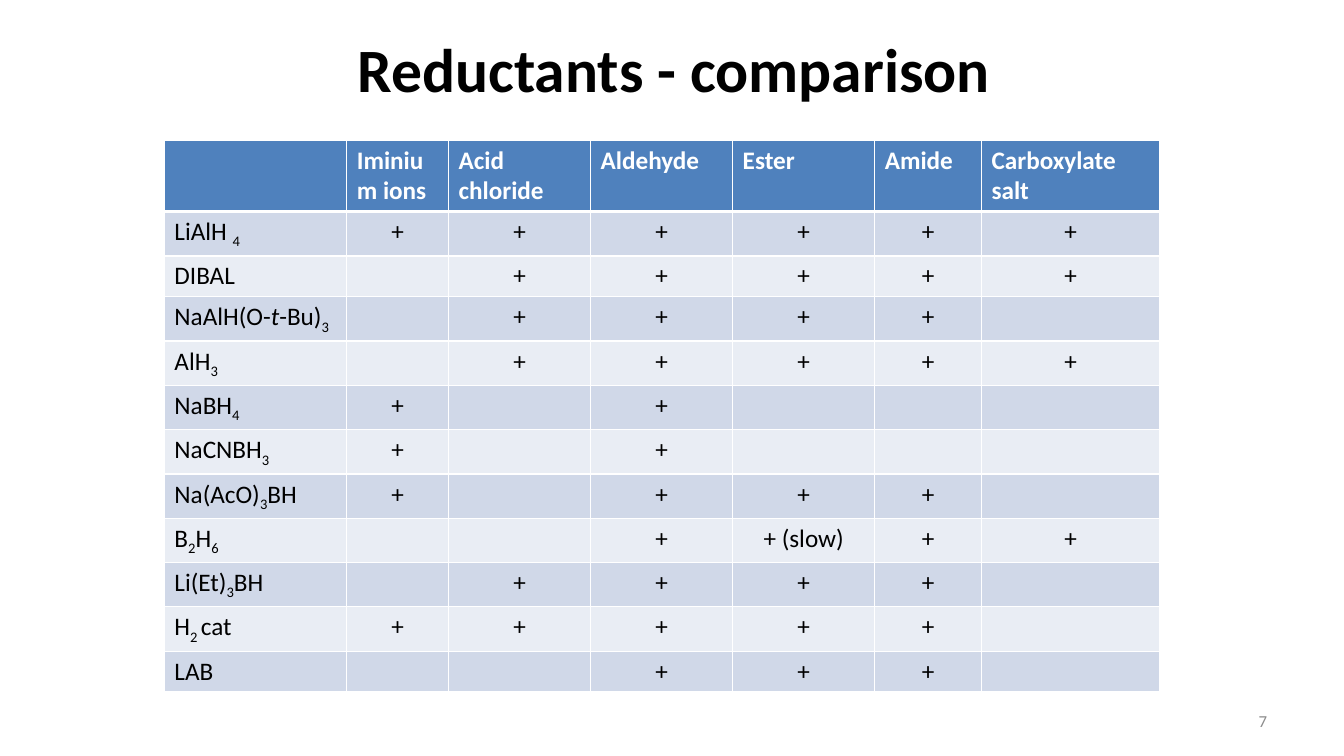
from dataclasses import dataclass

from lxml import etree
from pptx import Presentation
from pptx import util as u
from pptx.dml.color import RGBColor
from pptx.enum import text
from pptx.oxml import ns


@dataclass(frozen=True)
class Theme:
    font: str = "Calibri"
    title_size: int = 44
    body_size: int = 18
    number_size: int = 12
    ink: str = "000000"
    white: str = "FFFFFF"
    grey: str = "8C8C8C"
    header: str = "4F81BD"
    bands: tuple[str, str] = ("D0D8E8", "E9EDF4")


@dataclass(frozen=True)
class Reductant:
    """Formula: |subscript| and *italic*; reactions follow SUBSTRATES."""
    formula: str
    reactions: tuple[str, ...]


THEME = Theme()
SUBSTRATES = ("Iminium ions", "Acid chloride", "Aldehyde", "Ester", "Amide", "Carboxylate salt")
COLUMN_WIDTHS = (130.3, 72.7, 101.5, 101.5, 101.5, 76.3, 127.4)
ROW_HEIGHT = 29.2
REDUCTANTS = (
    Reductant("LiAlH |4|", ("+", "+", "+", "+", "+", "+")),
    Reductant("DIBAL", ("", "+", "+", "+", "+", "+")),
    Reductant("NaAlH(O-*t*-Bu)|3|", ("", "+", "+", "+", "+", "")),
    Reductant("AlH|3|", ("", "+", "+", "+", "+", "+")),
    Reductant("NaBH|4|", ("+", "", "+", "", "", "")),
    Reductant("NaCNBH|3|", ("+", "", "+", "", "", "")),
    Reductant("Na(AcO)|3|BH", ("+", "", "+", "+", "+", "")),
    Reductant("B|2|H|6|", ("", "", "+", "+ (slow)", "+", "+")),
    Reductant("Li(Et)|3|BH", ("", "+", "+", "+", "+", "")),
    Reductant("H|2 |cat", ("+", "+", "+", "+", "+", "")),
    Reductant("LAB", ("", "", "+", "+", "+", "")),
)


def format_paragraph(paragraph, size: int, color: str, align, bold: bool = False) -> None:
    paragraph.alignment = align
    font = paragraph.font
    font.name, font.size, font.bold = THEME.font, u.Pt(size), bold
    font.color.rgb = RGBColor.from_string(color)


def add_formula(paragraph, formula: str) -> None:
    for level, part in enumerate(formula.split("|")):
        for slant, piece in enumerate(part.split("*")):
            if not piece:
                continue
            run = paragraph.add_run()
            run.text = piece
            if slant % 2:
                run.font.italic = True
            if level % 2:
                run.font._element.set("baseline", "-25000")


def set_borders(cell, top: int, bottom: int) -> None:
    properties = cell._tc.get_or_add_tcPr()
    for side, width in (("L", 1), ("R", 1), ("T", top), ("B", bottom)):
        line = etree.SubElement(properties, ns.qn(f"a:ln{side}"), w=str(u.Pt(width)))
        fill = etree.SubElement(line, ns.qn("a:solidFill"))
        etree.SubElement(fill, ns.qn("a:srgbClr"), val=THEME.white)


def add_comparison_table(slide) -> None:
    rows = [("", *SUBSTRATES)] + [(item.formula, *item.reactions) for item in REDUCTANTS]
    table = slide.shapes.add_table(
        len(rows), len(COLUMN_WIDTHS), u.Pt(117.4), u.Pt(100),
        u.Pt(sum(COLUMN_WIDTHS)), u.Pt(ROW_HEIGHT * len(rows))).table
    table.horz_banding = False
    for column, width in zip(table.columns, COLUMN_WIDTHS):
        column.width = u.Pt(width)

    for row_index, values in enumerate(rows):
        table.rows[row_index].height = u.Pt(ROW_HEIGHT)
        is_header = row_index == 0
        fill = THEME.header if is_header else THEME.bands[(row_index - 1) % 2]
        for column_index, value in enumerate(values):
            cell = table.cell(row_index, column_index)
            set_borders(cell, 3 if row_index == 1 else 1, 3 if is_header else 1)
            cell.fill.solid()
            cell.fill.fore_color.rgb = RGBColor.from_string(fill)
            paragraph = cell.text_frame.paragraphs[0]
            add_formula(paragraph, value)
            centred = not is_header and column_index > 0
            format_paragraph(
                paragraph, THEME.body_size, THEME.white if is_header else THEME.ink,
                text.PP_ALIGN.CENTER if centred else text.PP_ALIGN.LEFT, is_header)


def add_title(slide) -> None:
    title = slide.shapes.title
    title.left, title.top, title.width, title.height = map(u.Pt, (123.1, 3.6, 717.1, 90))
    title.text_frame.text = "Reductants - comparison"
    title.text_frame.vertical_anchor = text.MSO_ANCHOR.MIDDLE
    format_paragraph(title.text_frame.paragraphs[0], THEME.title_size, THEME.ink,
                     text.PP_ALIGN.CENTER, True)


def add_page_number(slide) -> None:
    frame = slide.shapes.add_textbox(*map(u.Pt, (688.3, 500.4, 223.9, 28.8))).text_frame
    frame.word_wrap = True
    frame.vertical_anchor = text.MSO_ANCHOR.MIDDLE
    frame.text = "7"
    format_paragraph(frame.paragraphs[0], THEME.number_size, THEME.grey, text.PP_ALIGN.RIGHT)


def main() -> None:
    presentation = Presentation()
    presentation.slide_width, presentation.slide_height = u.Pt(960), u.Pt(540)
    slide = presentation.slides.add_slide(presentation.slide_layouts.get_by_name("Title Only"))
    add_title(slide)
    add_comparison_table(slide)
    add_page_number(slide)
    presentation.save("out.pptx")


if __name__ == "__main__":
    main()
